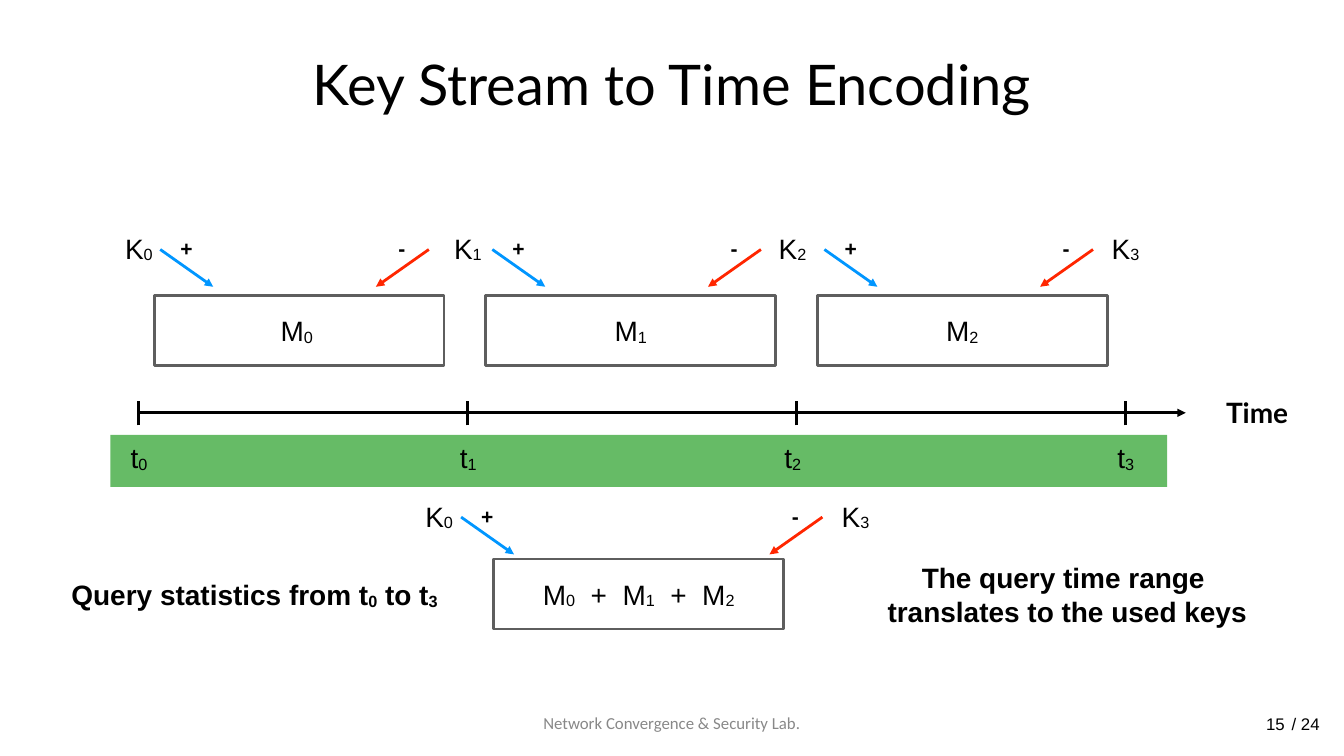
from lxml import etree
from pptx import Presentation
from pptx.dml.color import RGBColor
from pptx.enum.shapes import MSO_CONNECTOR, MSO_SHAPE
from pptx.enum.text import MSO_ANCHOR, MSO_AUTO_SIZE, PP_ALIGN
from pptx.oxml.ns import qn
from pptx.util import Emu, Pt

EMU_PER_PX = 9144
BLACK = RGBColor(0x00, 0x00, 0x00)
GRAY = RGBColor(0x88, 0x88, 0x88)
OUTLINE = RGBColor(0x5E, 0x5E, 0x5E)
GREEN = RGBColor(0x00, 0x8F, 0x00)
BLUE = RGBColor(0x00, 0x96, 0xFF)
RED = RGBColor(0xFF, 0x26, 0x00)

RECTANGLE = MSO_SHAPE.RECTANGLE
STRAIGHT = MSO_CONNECTOR.STRAIGHT
CENTER = PP_ALIGN.CENTER
MIDDLE = MSO_ANCHOR.MIDDLE
TOP = MSO_ANCHOR.TOP
NO_FIT = MSO_AUTO_SIZE.NONE
GROW = MSO_AUTO_SIZE.SHAPE_TO_FIT_TEXT


def px(value):
    return Emu(value * EMU_PER_PX)


class Diagram:
    font = "Arial"
    heading_font = "Lato"
    size = 40
    line_width = Pt(4)
    subscript = "-6000"

    def __init__(self, slide):
        self.slide = slide

    def fill_text(self, shape, text, size=None, font=None, color=BLACK,
                  bold=False, inset=6, anchor=MIDDLE):
        frame = shape.text_frame
        frame.vertical_anchor = anchor
        frame.margin_left = frame.margin_right = px(inset)
        frame.margin_top = frame.margin_bottom = px(inset)
        for index, line in enumerate(text.split("\n")):
            para = frame.add_paragraph() if index else frame.paragraphs[0]
            para.alignment = CENTER
            for position, part in enumerate(line.split("|")):
                if not part:
                    continue
                span = para.add_run()
                span.text = part
                span.font.size = Pt(size or self.size)
                span.font.name = font or self.font
                span.font.bold = bold
                span.font.color.rgb = color
                if position % 2:
                    span.font._element.set("baseline", self.subscript)

    def title(self, text, left, top, width, height):
        box = self.slide.shapes.title
        box.left, box.top = px(left), px(top)
        box.width, box.height = px(width), px(height)
        box.text_frame.auto_size = NO_FIT
        self.fill_text(box, text, size=80, font=self.heading_font)

    def label(self, text, left, top, width, height, wrap=False, **style):
        box = self.slide.shapes.add_textbox(px(left), px(top), px(width), px(height))
        box.text_frame.word_wrap = wrap
        box.text_frame.auto_size = GROW
        self.fill_text(box, text, **style)

    def rectangle(self, left, top, width, height):
        box = self.slide.shapes.add_shape(
            RECTANGLE, px(left), px(top), px(width), px(height))
        box.shadow.inherit = False
        return box

    def message(self, text, left, top):
        box = self.rectangle(left, top, 575, 139)
        box.fill.background()
        box.line.color.rgb = OUTLINE
        box.line.width = self.line_width
        self.fill_text(box, text, inset=0)

    def band(self, left, top, width, height, color, opacity):
        box = self.rectangle(left, top, width, height)
        box.fill.solid()
        box.fill.fore_color.rgb = color
        box.line.fill.background()
        color_node = next(box._element.spPr.iter(qn("a:srgbClr")))
        etree.SubElement(color_node, qn("a:alpha"), val=str(opacity * 1000))

    def line(self, start, end, color=BLACK, arrow=False):
        connector = self.slide.shapes.add_connector(
            STRAIGHT, *(px(value) for value in (*start, *end)))
        connector.line.color.rgb = color
        connector.line.width = self.line_width
        properties = connector._element.spPr
        if arrow:
            etree.SubElement(properties.find(qn("a:ln")),
                             qn("a:tailEnd"), type="triangle")
        etree.SubElement(properties, qn("a:effectLst"))

    def key(self, index, left, top):
        self.label(f"K|{index}", left, top, 71, 78)

    def add_key(self, x, y):
        self.line((x, y), (x + 105, y + 74), BLUE, arrow=True)
        self.label("+", x + 33, y - 33, 38, 61, size=30, bold=True)

    def subtract_key(self, x, y):
        self.line((x, y), (x - 105, y + 74), RED, arrow=True)
        self.label("-", x - 68, y - 33, 29, 61, size=30, bold=True)


def main():
    deck = Presentation()
    deck.slide_width, deck.slide_height = px(2667), px(1500)
    page = deck.slides.add_slide(deck.slide_layouts[5])
    diagram = Diagram(page)

    diagram.title("Key Stream to Time Encoding", 113, 39, 2441, 250)

    diagram.band(219, 863, 2097, 103, GREEN, 60)
    diagram.line((273, 819), (2353, 819), arrow=True)
    diagram.label("Time", 2424, 781, 141, 76, font=diagram.heading_font, bold=True)

    for index, left in enumerate((240, 893, 1537, 2198)):
        tick = 275 + 653 * index
        diagram.line((tick, 844), (tick, 795))
        diagram.key(index, left, 453)
        diagram.label(f"t|{index}", left + 10, 869, 52, 78)

    for index, subscript in enumerate(("0 ", "1", "2")):
        diagram.message(f"M|{subscript}", 306 + 658 * index, 586)
        diagram.add_key(318 + 659 * index, 495)
        diagram.subtract_key(851 + 659 * index, 495)

    diagram.message("M|0|  +  M|1|  +  M|2", 980, 1109)
    diagram.key(0, 836, 985)
    diagram.add_key(915, 1026)
    diagram.key(3, 1662, 985)
    diagram.subtract_key(1632, 1026)

    diagram.label("Query statistics from t|0| to t|3", 132, 1140, 746, 78, bold=True)
    diagram.label("The query time range \ntranslates to the used keys",
                  1754, 1106, 727, 146, bold=True)

    diagram.label("Network Convergence & Security Lab.", 988, 1410, 690, 49,
                  wrap=True, size=24, font="Calibri", color=GRAY, inset=5)
    diagram.label("15", 2506, 1410, 50, 50, size=24, anchor=TOP)
    diagram.label("/ 24", 2556, 1410, 70, 50, size=24, anchor=TOP)

    deck.save("out.pptx")


if __name__ == "__main__":
    main()
